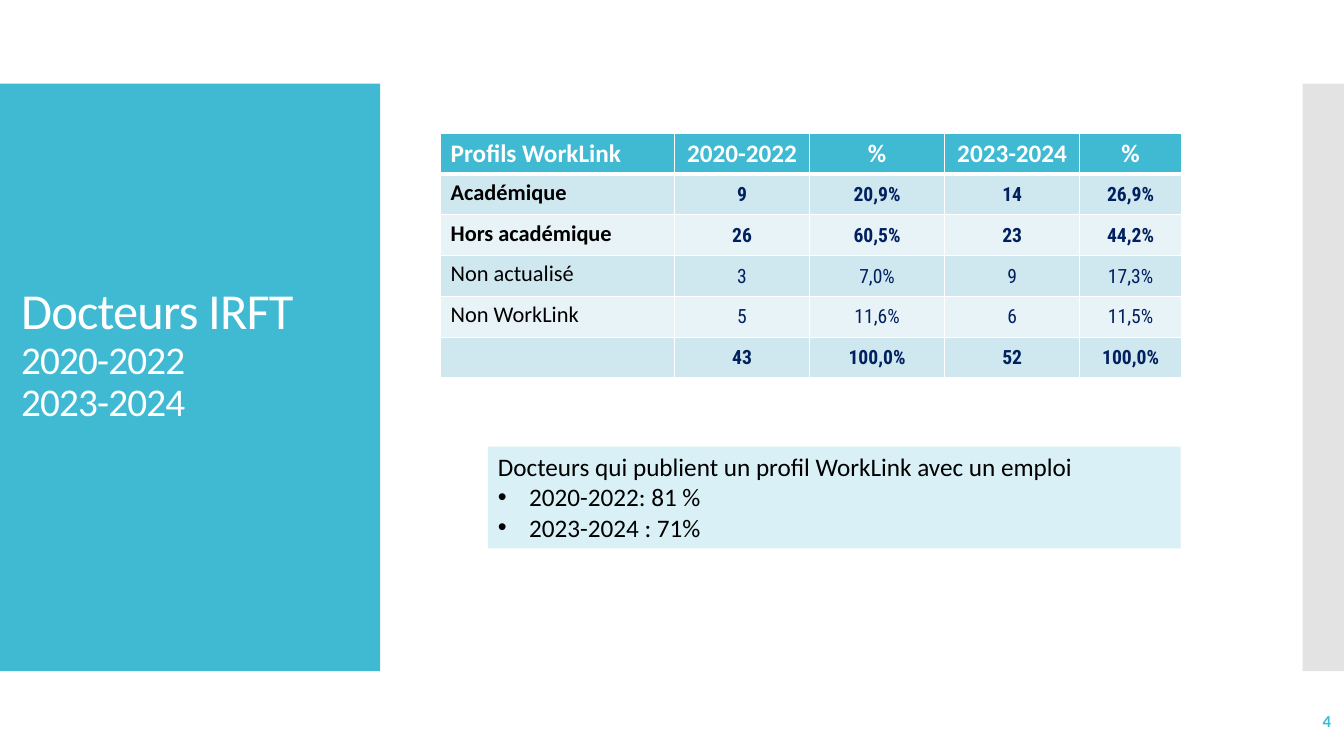
from lxml.etree import SubElement
from pptx import Presentation
from pptx.dml.color import RGBColor
from pptx.enum.shapes import MSO_SHAPE
from pptx.enum.text import MSO_ANCHOR, MSO_AUTO_SIZE, PP_ALIGN
from pptx.oxml.ns import qn
from pptx.util import Inches, Pt

COLORS = {
    "teal": "40BAD2", "grey": "C8C8C8", "white": "FFFFFF", "black": "000000",
    "navy": "002060", "band": "CFE7EE", "pale": "E8F3F7", "note": "D9F1F6",
}
HEADER = ["Profils WorkLink", "2020-2022", "%", "2023-2024", "%"]
ROWS = [
    (["Académique", "9", "20,9%", "14", "26,9%"], True),
    (["Hors académique", "26", "60,5%", "23", "44,2%"], True),
    (["Non actualisé", "3", "7,0%", "9", "17,3%"], False),
    (["Non WorkLink", "5", "11,6%", "6", "11,5%"], False),
    (["", "43", "100,0%", "52", "100,0%"], True),
]
COLUMN_WIDTHS = [2.32, 1.34, 1.34, 1.34, 1.01]


def rgb(name):
    return RGBColor.from_string(COLORS[name])


def add_run(p, text, size, color, bold=False, font="Calibri"):
    r = p.add_run()
    r.text = text
    r.font.name = font
    r.font.size = Pt(size)
    r.font.bold = bold
    r.font.color.rgb = rgb(color)
    return r


def add_panel(slide, box, color, alpha=None):
    sp = slide.shapes.add_shape(MSO_SHAPE.RECTANGLE, *map(Inches, box))
    sp.shadow.inherit = False
    sp.line.fill.background()
    sp.fill.solid()
    sp.fill.fore_color.rgb = rgb(color)
    if alpha is not None:
        clr = sp.fill._xPr.find(qn("a:solidFill"))[0]
        SubElement(clr, qn("a:alpha")).set("val", str(alpha * 1000))
    return sp


def add_title(slide, box):
    title = slide.shapes.title
    title.left, title.top, title.width, title.height = map(Inches, box)
    tf = title.text_frame
    tf.word_wrap = True
    tf.auto_size = MSO_AUTO_SIZE.NONE
    tf.vertical_anchor = MSO_ANCHOR.MIDDLE
    tf.margin_bottom = Inches(0.48)
    p = tf.paragraphs[0]
    p.alignment = PP_ALIGN.LEFT
    p.line_spacing = 0.9
    for i, (text, size) in enumerate([("Docteurs IRFT", 36), ("2020-2022", 28), ("2023-2024", 28)]):
        if i:
            p.add_line_break()
        r = add_run(p, text, size, "white")
        r.font._element.set("spc", "-60")


def style_cell(cell, fill, bottom=1):
    tcPr = cell._tc.get_or_add_tcPr()
    for side, width in (("L", 1), ("R", 1), ("T", 1), ("B", bottom)):
        ln = SubElement(tcPr, qn("a:ln" + side), w=str(Pt(width)))
        solid = SubElement(ln, qn("a:solidFill"))
        SubElement(solid, qn("a:srgbClr"), val=COLORS["white"])
    cell.fill.solid()
    cell.fill.fore_color.rgb = rgb(fill)


def add_profile_table(slide, box):
    count = len(ROWS) + 1
    table = slide.shapes.add_table(count, len(HEADER), *map(Inches, box)).table
    for column, width in zip(table.columns, COLUMN_WIDTHS):
        column.width = Inches(width)
    for row in table.rows:
        row.height = Inches(box[3] / count)

    for j, text in enumerate(HEADER):
        cell = table.cell(0, j)
        style_cell(cell, "teal", bottom=3)
        p = cell.text_frame.paragraphs[0]
        p.alignment = PP_ALIGN.CENTER if j else PP_ALIGN.LEFT
        add_run(p, text, 18, "white", True)

    for i, (values, bold) in enumerate(ROWS, 1):
        for j, text in enumerate(values):
            cell = table.cell(i, j)
            style_cell(cell, "band" if i % 2 else "pale")
            p = cell.text_frame.paragraphs[0]
            if j:
                cell.vertical_anchor = MSO_ANCHOR.MIDDLE
                cell.margin_left = cell.margin_right = cell.margin_top = Inches(0.01)
                cell.margin_bottom = 0
                p.alignment = PP_ALIGN.CENTER
                add_run(p, text, 14, "navy", bold, "Roboto Condensed")
            elif text:
                add_run(p, text, 16, "black", bold)


def add_note(slide, box):
    tf = add_panel(slide, box, "note").text_frame
    tf.word_wrap = True
    tf.vertical_anchor = MSO_ANCHOR.TOP
    lines = ["Docteurs qui publient un profil WorkLink avec un emploi",
             "2020-2022: 81 %", "2023-2024 : 71%"]
    for i, text in enumerate(lines):
        p = tf.add_paragraph() if i else tf.paragraphs[0]
        p.alignment = PP_ALIGN.LEFT
        add_run(p, text, 18, "black")
        if i:
            pPr = p._p.get_or_add_pPr()
            indent = Inches(0.31)
            pPr.set("marL", str(indent))
            pPr.set("indent", str(-indent))
            SubElement(pPr, qn("a:buFont"), typeface="Arial")
            SubElement(pPr, qn("a:buChar"), char="•")


def add_page_number(slide, box):
    tf = slide.shapes.add_textbox(*map(Inches, box)).text_frame
    tf.word_wrap = True
    tf.vertical_anchor = MSO_ANCHOR.MIDDLE
    p = tf.paragraphs[0]
    p.alignment = PP_ALIGN.RIGHT
    add_run(p, "4", 12, "teal", True)


def main():
    prs = Presentation()
    prs.slide_width, prs.slide_height = Inches(13.33), Inches(7.5)
    slide = prs.slides.add_slide(prs.slide_layouts[5])
    add_panel(slide, (0, 0.83, 3.77, 5.83), "teal")
    add_panel(slide, (12.92, 0.83, 0.41, 5.83), "grey", alpha=50)
    title = slide.shapes.title._element
    title.getparent().append(title)
    add_title(slide, (0.11, 1.23, 3.77, 5.03))
    add_profile_table(slide, (4.37, 1.32, 7.34, 2.43))
    add_note(slide, (4.84, 4.43, 6.87, 1.01))
    add_page_number(slide, (11.63, 6.95, 1.67, 0.4))
    prs.save("out.pptx")


if __name__ == "__main__":
    main()
